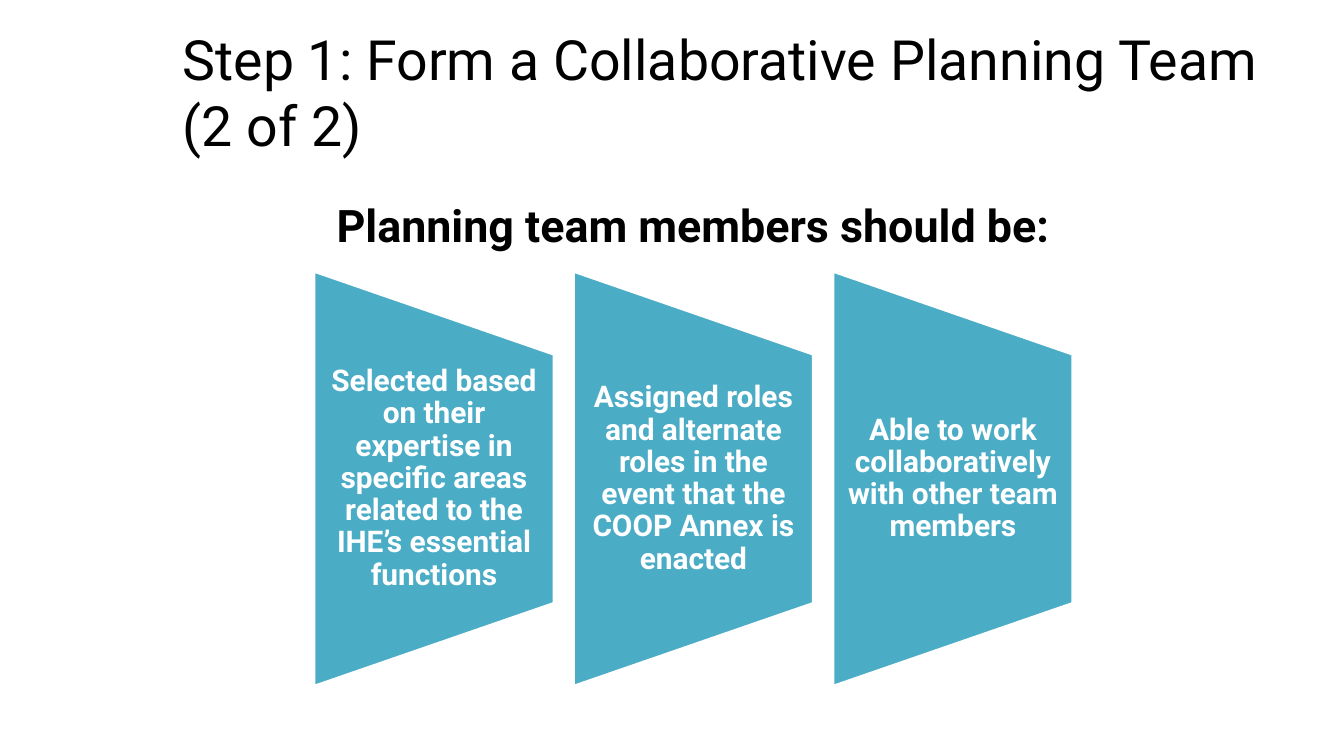
from pptx import Presentation
from pptx.dml.color import RGBColor
from pptx.enum.shapes import MSO_SHAPE
from pptx.enum.text import MSO_ANCHOR, PP_ALIGN
from pptx.util import Pt

HUES = {"ink": "000000", "teal": "4BACC6", "white": "FFFFFF"}
ROLES = [
    "Selected based on their expertise in specific areas related to the IHE’s essential functions",
    "Assigned roles and alternate roles in the event that the COOP Annex is enacted",
    "Able to work collaboratively with other team members",
]


class Deck:
    """Holds the style and the current slide."""

    def __init__(self):
        self.show = Presentation()
        self.show.slide_width, self.show.slide_height = Pt(720), Pt(405)
        self.slide = self.show.slides.add_slide(self.show.slide_layouts[6])
        self.font = "Roboto"

    def hue(self, name):
        return RGBColor.from_string(HUES[name])

    def text(self, words, area, size, hue="ink", bold=False, align=PP_ALIGN.LEFT,
             anchor=MSO_ANCHOR.TOP, pad=(7.2, 3.6), space=1.0):
        box = self.slide.shapes.add_textbox(*map(Pt, area))
        frame = box.text_frame
        frame.word_wrap = True
        frame.vertical_anchor = anchor
        frame.margin_left = frame.margin_right = Pt(pad[0])
        frame.margin_top = frame.margin_bottom = Pt(pad[1])
        para = frame.paragraphs[0]
        para.text = words
        para.alignment = align
        para.line_spacing = space
        for run in para.runs:
            run.font.name = self.font
            run.font.size = Pt(size)
            run.font.bold = bold
            run.font.color.rgb = self.hue(hue)

    def panel(self, area):
        shape = self.slide.shapes.add_shape(
            MSO_SHAPE.FLOWCHART_MANUAL_OPERATION, *map(Pt, area))
        shape.rotation = 270
        shape.shadow.inherit = False
        shape.fill.solid()
        shape.fill.fore_color.rgb = self.hue("teal")
        shape.line.color.rgb = self.hue("white")
        shape.line.width = Pt(2)


def main():
    deck = Deck()
    deck.text("Step 1: Form a Collaborative Planning Team\v(2 of 2)",
              (90.7, 15.1, 624.2, 67.7), 29.7, anchor=MSO_ANCHOR.MIDDLE)
    deck.text("Planning team members should be:", (128.2, 102.2, 486, 267.1), 24,
              bold=True, align=PP_ALIGN.CENTER)
    long, wide, tall, step = 223, 129, 134, 139
    left, mid = 168, 256.5
    for col, role in enumerate(ROLES):
        x = left + col * step
        deck.panel((x + (wide - long) / 2, mid - wide / 2, long, wide))
        deck.text(role, (x, mid - tall / 2, wide, tall), 16, hue="white", bold=True,
                  align=PP_ALIGN.CENTER, anchor=MSO_ANCHOR.MIDDLE, pad=(8, 0), space=0.9)
    deck.show.save("out.pptx")


if __name__ == "__main__":
    main()
